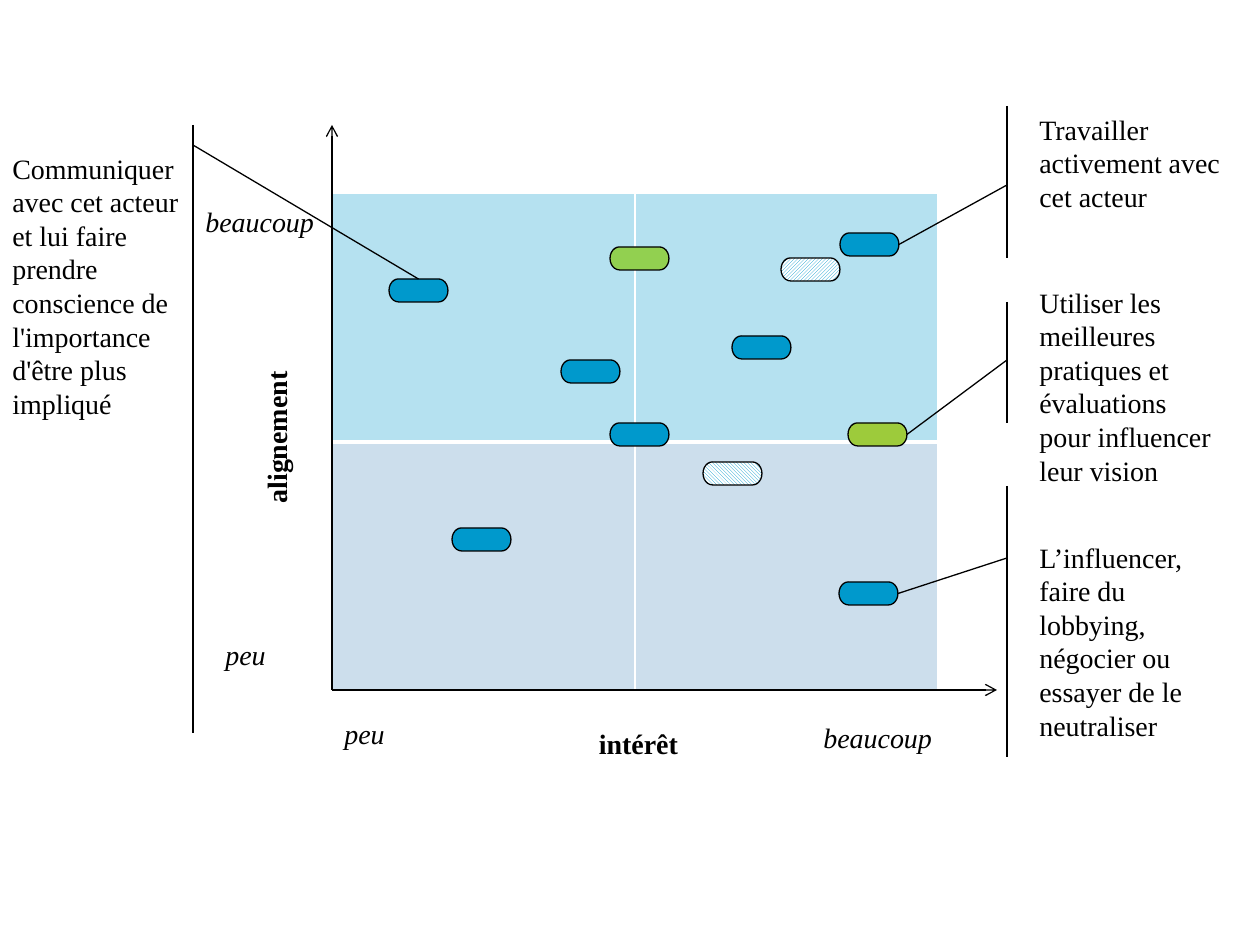
from lxml import etree
from pptx import Presentation, util as u
from pptx.dml.color import RGBColor
from pptx.enum import dml, shapes, text
from pptx.oxml.ns import qn

PX = 914400 / 126
BLUE, WHITE, BLACK = "0099CC", "FFFFFF", "000000"
rgb = RGBColor.from_string


def px(*vals):
    """Turn pixel lengths into EMU."""
    return [round(v * PX) for v in vals]


def line(x1, y1, x2, y2):
    link = page.shapes.add_connector(shapes.MSO_CONNECTOR.STRAIGHT, *px(x1, y1, x2, y2))
    link.line.color.rgb = rgb(BLACK)
    link.line.width = u.Pt(0.75)
    etree.SubElement(link._element.spPr, qn("a:effectLst"))
    return link


deck = Presentation()
deck.slide_width, deck.slide_height = px(1260, 945)
page = deck.slides.add_slide(deck.slide_layouts[6])

# Matrix of four quadrants
grid = page.shapes.add_table(2, 2, *px(332, 193, 606, 498)).table
grid.first_row = grid.horz_banding = False
for row in range(2):
    for col in range(2):
        cell = grid.cell(row, col)
        cell.fill.solid()
        cell.fill.fore_color.rgb = rgb([BLUE, "CCDEEC"][row])
        props = cell._tc.get_or_add_tcPr()
        if row == 0:
            tint = props.find(".//" + qn("a:srgbClr"))
            etree.SubElement(tint, qn("a:alpha"), val="29000")
        thick = "lnB" if row == 0 else "lnT"
        for pos, side in enumerate(["lnL", "lnR", "lnT", "lnB"]):
            width = u.Pt(3 if side == thick else 1)
            edge = etree.Element(qn("a:" + side), w=str(width))
            fill = etree.SubElement(edge, qn("a:solidFill"))
            etree.SubElement(fill, qn("a:srgbClr"), val=WHITE)
            props.insert(pos, edge)

# Axes
for end in [(332, 125), (997, 690)]:
    axis = line(332, 690, *end)
    etree.SubElement(axis.line._get_or_add_ln(), qn("a:tailEnd"), type="arrow")

# Actors: left, top, fill, start of the callout line, side it joins
DOWN = dml.MSO_PATTERN.DARK_DOWNWARD_DIAGONAL
UP = dml.MSO_PATTERN.DARK_UPWARD_DIAGONAL
actors = [
    (389, 279, BLUE, (193, 145), 0),
    (703, 462, DOWN, None, None),
    (839, 582, BLUE, (1007, 558), 3),
    (732, 336, BLUE, None, None),
    (781, 258, UP, None, None),
    (840, 233, BLUE, (1007, 185), 3),
    (610, 247, "92D050", None, None),
    (452, 528, BLUE, None, None),
    (561, 360, BLUE, None, None),
    (610, 423, BLUE, None, None),
    (848, 423, "9DCB3B", (1007, 360), 3),
]
for left, top, fill, start, side in actors:
    pill = page.shapes.add_shape(
        shapes.MSO_SHAPE.FLOWCHART_TERMINATOR, *px(left, top, 59, 23))
    pill.shadow.inherit = False
    pill.line.color.rgb = rgb(BLACK)
    pill.line.width = u.Pt(0.75)
    if fill in (DOWN, UP):
        pill.fill.patterned()
        pill.fill.pattern = fill
        pill.fill.fore_color.rgb = rgb(BLUE)
        pill.fill.back_color.rgb = rgb(WHITE)
    else:
        pill.fill.solid()
        pill.fill.fore_color.rgb = rgb(fill)
    if start:
        line(*start, left, top).end_connect(pill, side)

# Bars beside the comments
for x, top, end in [(193, 125, 733), (1007, 106, 258), (1007, 302, 423), (1007, 486, 757)]:
    line(x, top, x, end)

# Labels: box, words, style (i italic, b bold and centred, v also upright)
labels = [
    (811, 714, 146, 47, "beaucoup", "i"),
    (332, 710, 110, 47, "peu", "i"),
    (213, 631, 110, 47, "peu", "i"),
    (193, 198, 139, 47, "beaucoup", "i"),
    (449, 720, 379, 47, "intérêt", "b"),
    (253, 244, 59, 387, "alignement", "bv"),
    (0, 145, 193, 285, "Communiquer avec cet acteur et lui faire prendre "
     "conscience de l'importance d'être plus impliqué", ""),
    (1027, 106, 208, 115, "Travailler activement avec cet acteur", ""),
    (1027, 279, 208, 217, "Utiliser les meilleures pratiques et évaluations "
     "pour influencer leur vision", ""),
    (1027, 534, 208, 217, "L’influencer, faire du lobbying, négocier ou "
     "essayer de le neutraliser", ""),
]
for left, top, wide, high, words, style in labels:
    frame = page.shapes.add_textbox(*px(left, top, wide, high)).text_frame
    frame.word_wrap = True
    frame.auto_size = text.MSO_AUTO_SIZE.SHAPE_TO_FIT_TEXT
    if "v" in style:
        frame._txBody.bodyPr.set("vert", "vert270")
    para = frame.paragraphs[0]
    if "b" in style:
        para.alignment = text.PP_ALIGN.CENTER
    run = para.add_run()
    run.text = words
    run.font.name = "Times New Roman"
    run.font.size = u.Pt(16)
    run.font.bold = "b" in style
    run.font.italic = "i" in style
    run.font.color.rgb = rgb(BLACK)

deck.save("out.pptx")
